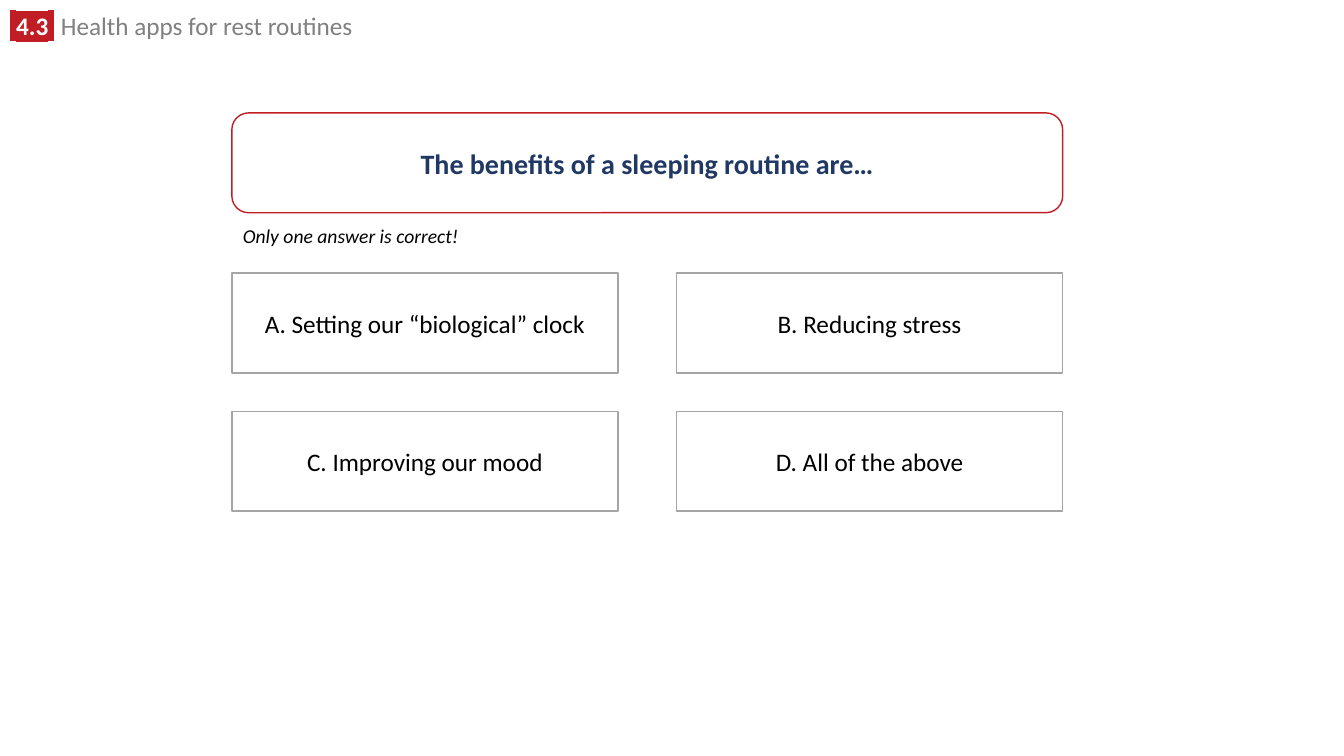
from lxml import etree
from pptx import Presentation
from pptx.dml.color import RGBColor
from pptx.enum import shapes, text
from pptx.oxml import ns
from pptx.util import Inches, Pt

RED = RGBColor(0xC0, 0x1E, 0x24)
NAVY = RGBColor(0x20, 0x38, 0x64)
GRAY = RGBColor(0x80, 0x80, 0x80)
EDGE = RGBColor(0xA5, 0xA5, 0xA5)
WHITE = RGBColor(0xFF, 0xFF, 0xFF)
BLACK = RGBColor(0, 0, 0)

# text, font, colour, bold, highlight
HEADER = [
    (" ", "Lato", WHITE, True, RED),
    ("4.3", "Calibri", WHITE, True, RED),
    (" ", "Lato", WHITE, True, RED),
    (" ", "Lato", GRAY, False, None),
    ("Health apps for rest routines", "Calibri", GRAY, False, None),
]
QUESTION = "The benefits of a sleeping routine are…"
HINT = "Only one answer is correct!"
ANSWERS = [
    "A. Setting our “biological” clock",
    "B. Reducing stress",
    "C. Improving our mood",
    "D. All of the above",
]

LEFT, WIDTH, HIGH = 2.3, 8.24, 0.99
CELL = 3.83
TOP, STEP = 2.71, 1.37


def add_run(para, words, size, color, font="Calibri", bold=False,
            italic=False, mark=None):
    run = para.add_run()
    run.text = words
    face = run.font
    face.size, face.bold, face.italic = Pt(size), bold, italic
    face.color.rgb = color
    if mark is not None:
        glow = etree.SubElement(face._element, ns.qn("a:highlight"))
        etree.SubElement(glow, ns.qn("a:srgbClr"), val=str(mark))
    face.name = font


def add_label(slide, left, top, width, high, wrap):
    """Add an empty text box and return its first paragraph."""
    box = slide.shapes.add_textbox(
        Inches(left), Inches(top), Inches(width), Inches(high))
    frame = box.text_frame
    frame.word_wrap = wrap
    frame.auto_size = text.MSO_AUTO_SIZE.SHAPE_TO_FIT_TEXT
    return frame.paragraphs[0]


def add_card(slide, kind, left, top, width, edge, words, size, color, bold):
    card = slide.shapes.add_shape(
        kind, Inches(left), Inches(top), Inches(width), Inches(HIGH))
    card.shadow.inherit = False
    card.fill.solid()
    card.fill.fore_color.rgb = WHITE
    card.line.color.rgb = edge
    card.line.width = Pt(1)
    frame = card.text_frame
    frame.word_wrap = True
    frame.vertical_anchor = text.MSO_ANCHOR.MIDDLE
    para = frame.paragraphs[0]
    para.alignment = text.PP_ALIGN.CENTER
    add_run(para, words, size, color, bold=bold)


def main():
    deck = Presentation()
    deck.slide_width, deck.slide_height = Inches(13.33), Inches(7.5)
    slide = deck.slides.add_slide(deck.slide_layouts[6])

    para = add_label(slide, 0, 0.11, 9.52, 0.35, True)
    para.line_spacing = 0.8
    for words, font, color, bold, mark in HEADER:
        add_run(para, words, 18, color, font, bold, mark=mark)

    kind = shapes.MSO_SHAPE
    add_card(slide, kind.ROUNDED_RECTANGLE, LEFT, 1.12, WIDTH, RED,
             QUESTION, 20, NAVY, True)
    for i, words in enumerate(ANSWERS):
        row, col = divmod(i, 2)
        add_card(slide, kind.RECTANGLE, LEFT + col * (WIDTH - CELL),
                 TOP + row * STEP, CELL, EDGE, words, 18, BLACK, False)

    para = add_label(slide, 2.31, 2.17, 2.36, 0.34, False)
    add_run(para, HINT, 14, BLACK, italic=True)

    deck.save("out.pptx")


if __name__ == "__main__":
    main()
